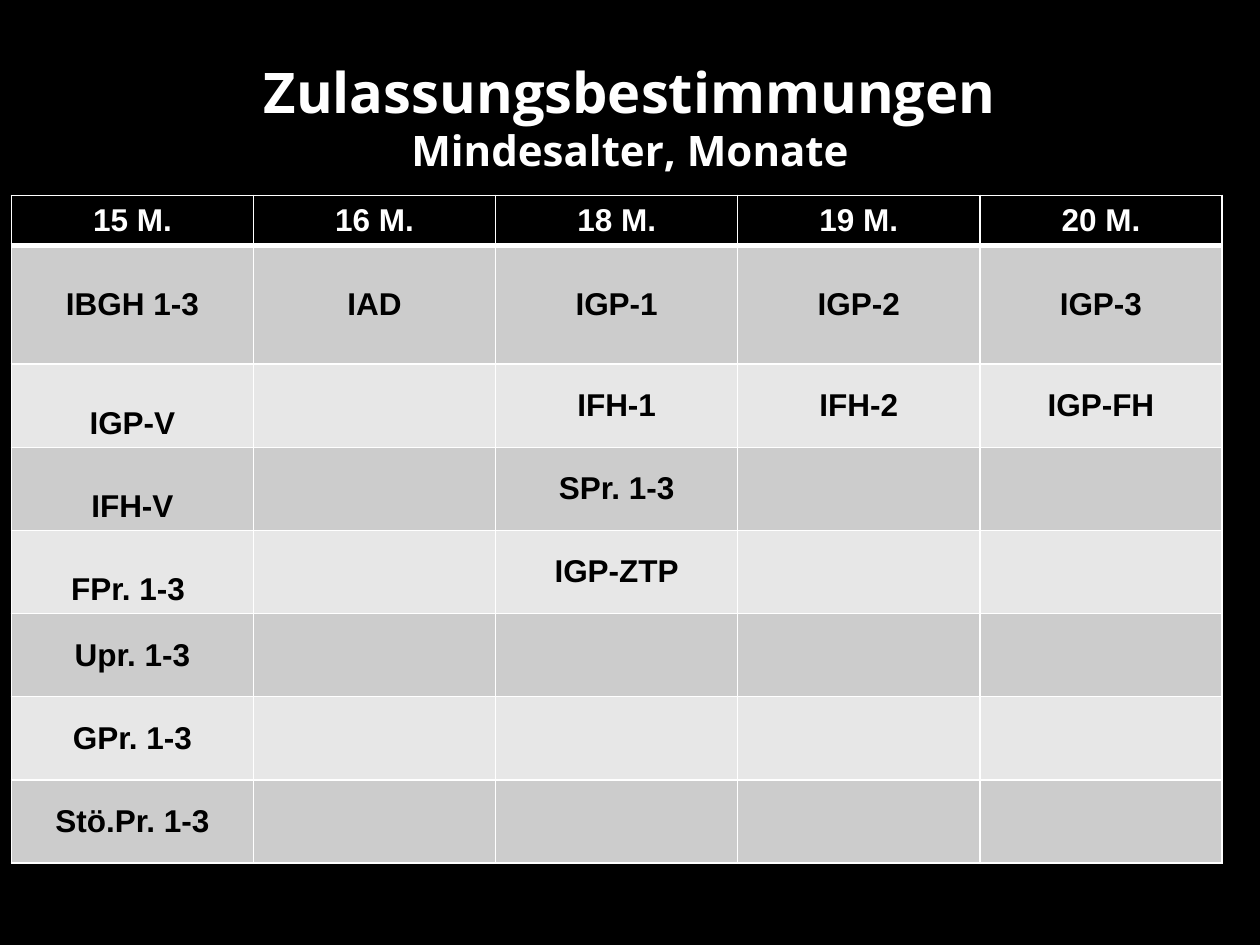
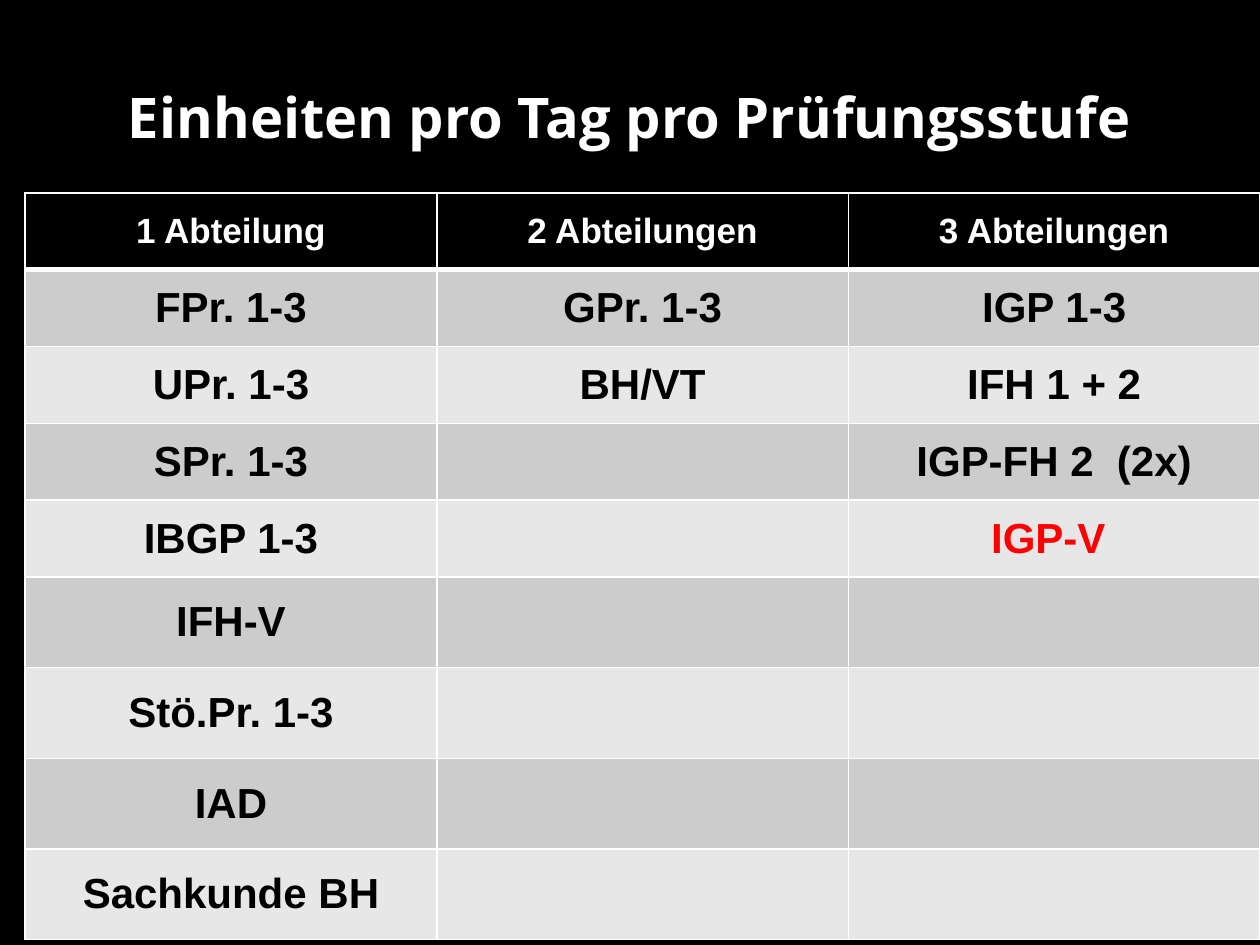
from lxml.etree import SubElement
from pptx import Presentation
from pptx.dml.color import RGBColor
from pptx.enum.text import MSO_ANCHOR, MSO_AUTO_SIZE, PP_ALIGN
from pptx.oxml.ns import qn
from pptx.util import Inches, Pt

COLORS = {
    "background": "000000",
    "header": "000000",
    "title": "FFFFFF",
    "border": "FFFFFF",
    "text": "000000",
    "highlight": "FF0000",
    "odd_row": "CCCCCC",
    "even_row": "E7E7E7",
}
TITLE_FONT = "Open Sans"
TABLE_FONT = "Arial"
TITLE_BOX = (0.5, 0.3, 9, 1.25)
THIN, THICK = 1, 3

MINIMUM_AGES = [
    ["15 M.", "16 M.", "18 M.", "19 M.", "20 M."],
    ["IBGH 1-3", "IAD", "IGP-1", "IGP-2", "IGP-3"],
    ["IGP-V", "", "IFH-1", "IFH-2", "IGP-FH"],
    ["IFH-V", "", "SPr. 1-3", "", ""],
    ["FPr. 1-3 ", "", "IGP-ZTP", "", ""],
    ["Upr. 1-3", "", "", "", ""],
    ["GPr. 1-3", "", "", "", ""],
    ["Stö.Pr. 1-3", "", "", "", ""],
]
UNITS_PER_DAY = [
    ["1 Abteilung", "2 Abteilungen", "3 Abteilungen"],
    ["FPr. 1-3", "GPr. 1-3", "IGP 1-3"],
    ["UPr. 1-3", "BH/VT", "IFH 1 + 2"],
    ["SPr. 1-3", "", "IGP-FH 2  (2x)"],
    ["IBGP 1-3", "", "IGP-V "],
    ["IFH-V", "", ""],
    ["Stö.Pr. 1-3", "", ""],
    ["IAD", "", ""],
    ["Sachkunde BH", "", ""],
]


def color(name):
    return RGBColor.from_string(COLORS[name])


def write_text(paragraph, text, *, size, font, color_name):
    """Append a bold run to the paragraph and centre it."""
    paragraph.alignment = PP_ALIGN.CENTER
    run = paragraph.add_run()
    run.text = text
    run.font.name = font
    run.font.size = Pt(size)
    run.font.bold = True
    run.font.color.rgb = color(color_name)


def add_title_slide(presentation, heading, subheading=None):
    """Add a title-only slide with an optional smaller second title line."""
    slide = presentation.slides.add_slide(presentation.slide_layouts[5])
    title = slide.shapes.title
    title.left, title.top, title.width, title.height = map(Inches, TITLE_BOX)
    frame = title.text_frame
    frame.auto_size = MSO_AUTO_SIZE.NONE
    frame.vertical_anchor = MSO_ANCHOR.MIDDLE
    paragraph = frame.paragraphs[0]
    write_text(paragraph, heading, size=32, font=TITLE_FONT, color_name="title")
    if subheading:
        paragraph.add_line_break()
        write_text(paragraph, subheading, size=24, font=TITLE_FONT, color_name="title")
    return slide


def set_borders(cell, top, bottom):
    """Draw all four cell borders; top and bottom are widths in points."""
    properties = cell._tc.get_or_add_tcPr()
    widths = {"a:lnL": THIN, "a:lnR": THIN, "a:lnT": top, "a:lnB": bottom}
    for tag, width in widths.items():
        line = SubElement(properties, qn(tag), w=str(Pt(width)))
        fill = SubElement(line, qn("a:solidFill"))
        SubElement(fill, qn("a:srgbClr"), val=COLORS["border"])


def fill_cell(cell, fill_name):
    cell.fill.solid()
    cell.fill.fore_color.rgb = color(fill_name)


def add_banded_table(slide, box, rows, row_heights, *, header_size, body_size,
                     low_cells=(), highlights=()):
    """Fill box (left, top, width) with a table.

    low_cells and highlights hold (row, column) pairs of cells whose text
    sits at the bottom or is shown in the highlight colour.
    """
    left, top, width = box
    column_count = len(rows[0])
    table = slide.shapes.add_table(
        len(rows), column_count, Inches(left), Inches(top),
        Inches(width), Inches(sum(row_heights))).table
    for column in table.columns:
        column.width = Inches(width / column_count)

    for row_index, (texts, height) in enumerate(zip(rows, row_heights)):
        table.rows[row_index].height = Inches(height)
        is_header = row_index == 0
        band = "header" if is_header else "odd_row" if row_index % 2 else "even_row"
        for column_index, text in enumerate(texts):
            position = (row_index, column_index)
            cell = table.cell(*position)
            set_borders(cell, top=THICK if row_index == 1 else THIN,
                        bottom=THICK if is_header else THIN)
            fill_cell(cell, band)
            if not text:
                continue
            low = position in low_cells
            cell.vertical_anchor = MSO_ANCHOR.BOTTOM if low else MSO_ANCHOR.MIDDLE
            body_color = "highlight" if position in highlights else "text"
            write_text(cell.text_frame.paragraphs[0], text, font=TABLE_FONT,
                       size=header_size if is_header else body_size,
                       color_name="title" if is_header else body_color)


def add_minimum_age_slide(presentation):
    slide = add_title_slide(presentation, "Zulassungsbestimmungen", "Mindesalter, Monate")
    add_banded_table(slide, (0.09, 1.55, 9.61), MINIMUM_AGES,
                     [0.4, 0.94] + [0.66] * 6, header_size=18, body_size=18,
                     low_cells={(row, 0) for row in (2, 3, 4)})


def add_units_per_day_slide(presentation):
    slide = add_title_slide(presentation, "Einheiten pro Tag pro Prüfungsstufe")
    add_banded_table(slide, (0.2, 1.53, 9.8), UNITS_PER_DAY,
                     [0.61] * 5 + [0.72] * 4, header_size=20, body_size=24,
                     highlights={(4, 2)})


def main():
    presentation = Presentation()
    presentation.slide_width = Inches(10)
    presentation.slide_height = Inches(7.5)
    background = presentation.slide_master.background.fill
    background.solid()
    background.fore_color.rgb = color("background")
    add_minimum_age_slide(presentation)
    add_units_per_day_slide(presentation)
    presentation.save("out.pptx")


if __name__ == "__main__":
    main()
